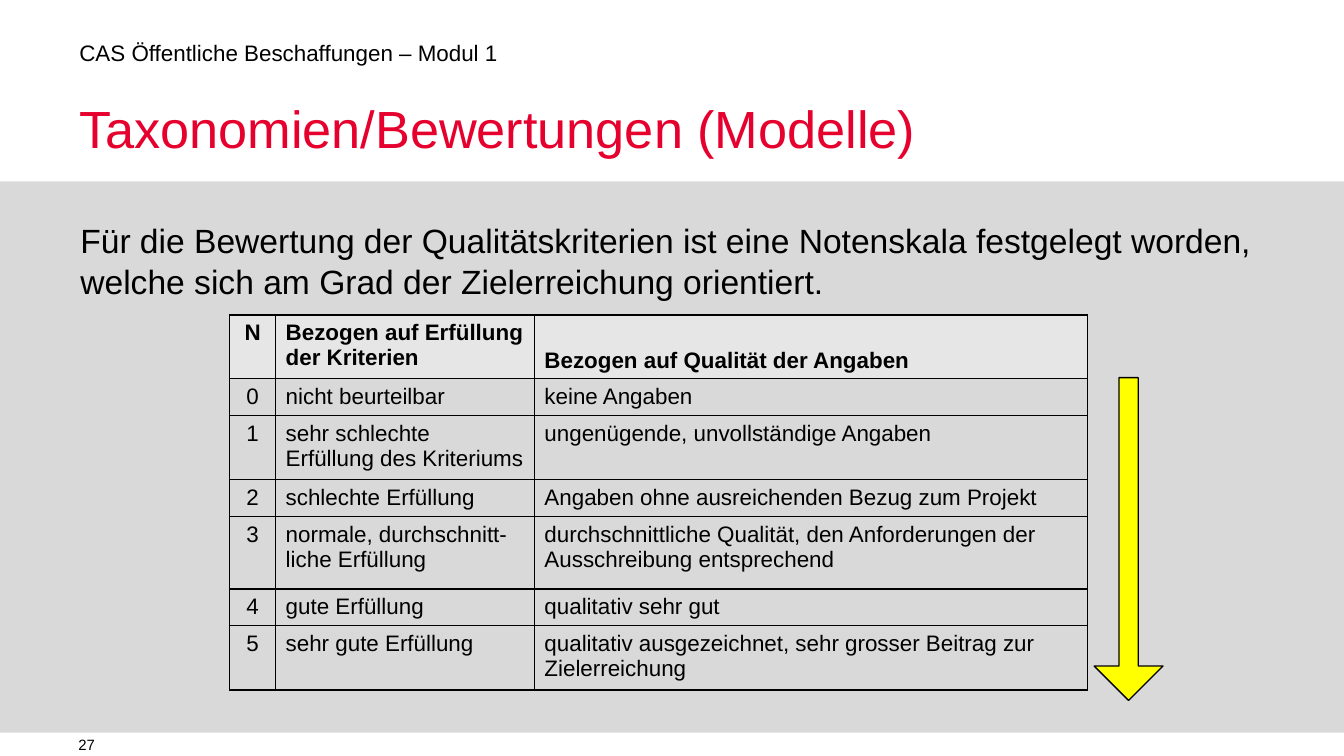
from dataclasses import dataclass

from lxml import etree
from pptx import Presentation
from pptx.dml.color import RGBColor
from pptx.enum.shapes import MSO_SHAPE
from pptx.enum.text import MSO_ANCHOR, MSO_AUTO_SIZE, PP_ALIGN
from pptx.oxml.ns import qn
from pptx.util import Cm, Pt

RECTANGLE, DOWN_ARROW = MSO_SHAPE.RECTANGLE, MSO_SHAPE.DOWN_ARROW
TOP, MIDDLE, BOTTOM = MSO_ANCHOR.TOP, MSO_ANCHOR.MIDDLE, MSO_ANCHOR.BOTTOM
LEFT, CENTER = PP_ALIGN.LEFT, PP_ALIGN.CENTER
FIXED_SIZE = MSO_AUTO_SIZE.NONE

FONT = "Arial"
COLORS = {
    "text": "000000",
    "title": "E6002E",
    "panel": "D9D9D9",
    "header": "E6E6E6",
    "arrow": "FFFF00",
}


@dataclass
class Area:
    left: float
    top: float
    width: float
    height: float

    def lengths(self) -> tuple:
        return Cm(self.left), Cm(self.top), Cm(self.width), Cm(self.height)


@dataclass
class GradeRow:
    grade: str
    fulfilment: str
    quality: str
    height: float
    line_below: float = 0.75

    def texts(self) -> tuple:
        return self.grade, self.fulfilment, self.quality


HEADER_LINE = 1
COLUMN_WIDTHS = (0.87, 4.89, 10.45)
ROWS = [
    GradeRow("N", "Bezogen auf Erfüllung der Kriterien",
             "Bezogen auf Qualität der Angaben", 1.21),
    GradeRow("0", "nicht beurteilbar", "keine Angaben", 0.7),
    GradeRow("1", "sehr schlechte Erfüllung des Kriteriums",
             "ungenügende, unvollständige Angaben", 1.21),
    GradeRow("2", "schlechte Erfüllung",
             "Angaben ohne ausreichenden Bezug zum Projekt", 0.7),
    GradeRow("3", "normale, durchschnitt-liche Erfüllung",
             "durchschnittliche Qualität, den Anforderungen der "
             "Ausschreibung entsprechend", 1.36, 1),
    GradeRow("4", "gute Erfüllung", "qualitativ sehr gut", 0.7, 1),
    GradeRow("5", "sehr gute Erfüllung",
             "qualitativ ausgezeichnet, sehr grosser Beitrag zur "
             "Zielerreichung", 1.21, 1),
]


def color(name: str) -> RGBColor:
    return RGBColor.from_string(COLORS[name])


def format_paragraph(para, size: float, color_name: str = "text",
                     bold: bool = False, align=LEFT) -> None:
    para.alignment = align
    para.font.name = FONT
    para.font.size = Pt(size)
    para.font.bold = bold
    para.font.color.rgb = color(color_name)


def fill_box(box, text: str, size: float, color_name: str = "text",
             spacing=None, anchor=TOP) -> None:
    frame = box.text_frame
    frame.margin_left = frame.margin_right = 0
    frame.margin_top = frame.margin_bottom = 0
    frame.word_wrap = True
    frame.auto_size = FIXED_SIZE
    frame.vertical_anchor = anchor
    frame.text = text
    para = frame.paragraphs[0]
    para.line_spacing = spacing
    format_paragraph(para, size, color_name)


def add_text(slide, area: Area, text: str, size: float, **options) -> None:
    fill_box(slide.shapes.add_textbox(*area.lengths()), text, size, **options)


def add_filled_shape(slide, kind, area: Area, fill: str):
    shape = slide.shapes.add_shape(kind, *area.lengths())
    shape.shadow.inherit = False
    shape.fill.solid()
    shape.fill.fore_color.rgb = color(fill)
    shape.line.fill.background()
    return shape


def set_borders(cell, above: float, below: float) -> None:
    properties = cell._tc.get_or_add_tcPr()
    sides = {"L": 0.75, "R": 0.75, "T": above, "B": below}
    for side, width in sides.items():
        line = etree.SubElement(properties, qn(f"a:ln{side}"), w=str(Pt(width)))
        fill = etree.SubElement(line, qn("a:solidFill"))
        etree.SubElement(fill, qn("a:srgbClr"), val=COLORS["text"])


def add_grade_table(slide, left: float, top: float) -> None:
    area = Area(left, top, sum(COLUMN_WIDTHS), sum(row.height for row in ROWS))
    table = slide.shapes.add_table(
        len(ROWS), len(COLUMN_WIDTHS), *area.lengths()).table
    table.first_row = table.horz_banding = False
    for column, width in zip(table.columns, COLUMN_WIDTHS):
        column.width = Cm(width)
    line_above = HEADER_LINE
    for row_index, row in enumerate(ROWS):
        table.rows[row_index].height = Cm(row.height)
        is_header = row_index == 0
        for column_index, text in enumerate(row.texts()):
            cell = table.cell(row_index, column_index)
            set_borders(cell, line_above, row.line_below)
            cell.margin_left = cell.margin_right = Cm(0.19)
            cell.margin_top = cell.margin_bottom = Cm(0.1)
            cell.text = text
            format_paragraph(cell.text_frame.paragraphs[0], 12, bold=is_header,
                             align=CENTER if column_index == 0 else LEFT)
            if is_header:
                cell.fill.solid()
                cell.fill.fore_color.rgb = color("header")
            else:
                cell.fill.background()
        line_above = row.line_below
    # The one-line heading sits at the foot of the header row
    table.cell(0, 2).vertical_anchor = BOTTOM


def main() -> None:
    deck = Presentation()
    deck.slide_width, deck.slide_height = Cm(25.4), Cm(14.29)
    slide = deck.slides.add_slide(deck.slide_layouts[5])

    # Title
    title = slide.shapes.title
    title.left, title.top, title.width, title.height = Area(
        1.5, 1.88, 19.5, 1.14).lengths()
    fill_box(title, "Taxonomien/Bewertungen (Modelle)", 28, "title", Pt(32))

    # Grey panel, running header and page number
    add_filled_shape(slide, RECTANGLE, Area(0, 3.43, 25.4, 10.42), "panel")
    add_text(slide, Area(1.5, 0.79, 19.5, 0.5),
             "CAS Öffentliche Beschaffungen – Modul 1", 12, spacing=0.9)
    add_text(slide, Area(1.48, 13.85, 4, 0.43), "27", 8, anchor=MIDDLE)

    # Introduction and grading scale
    add_text(slide, Area(1.52, 4.14, 22.2, 1.6),
             "Für die Bewertung der Qualitätskriterien ist eine Notenskala "
             "festgelegt worden, welche sich am Grad der Zielerreichung "
             "orientiert.", 18, spacing=Pt(22))
    add_grade_table(slide, 4.34, 5.95)

    # Arrow towards the best grade
    arrow = add_filled_shape(
        slide, DOWN_ARROW, Area(20.68, 7.14, 1.3, 6.1), "arrow")
    arrow.adjustments[0] = 0.28
    arrow.adjustments[1] = 0.5
    arrow.line.color.rgb = color("text")
    arrow.line.width = Pt(0.75)

    deck.save("out.pptx")


if __name__ == "__main__":
    main()
